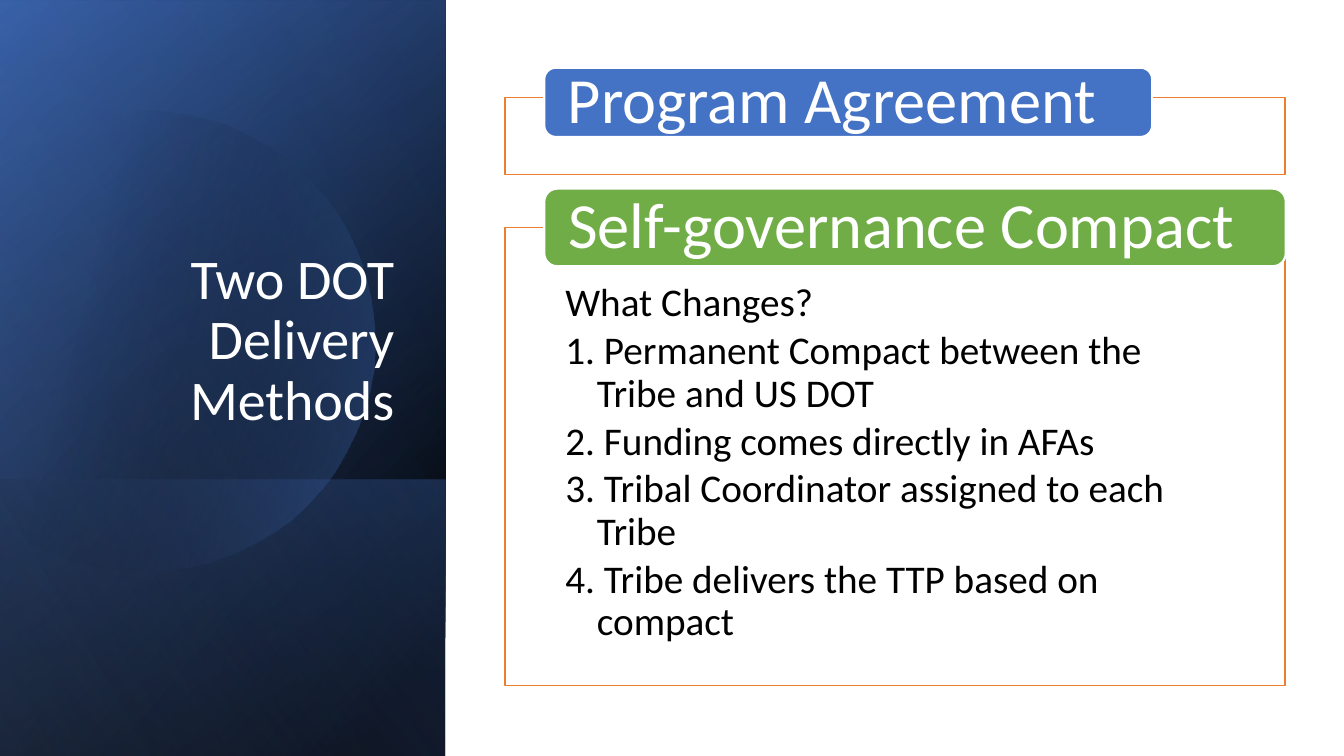
import pptx
import pptx.dml.color
import pptx.enum.shapes
import pptx.enum.text
import pptx.oxml
import pptx.oxml.ns
import pptx.util

Pt = pptx.util.Pt
SHAPES = pptx.enum.shapes.MSO_SHAPE
ALIGN = pptx.enum.text.PP_ALIGN
ANCHOR = pptx.enum.text.MSO_ANCHOR
COLOURS = {
    "black": "000000", "white": "FFFFFF", "blue": "4472C4", "navy": "2F5597",
    "pale": "8FAADC", "orange": "ED7D31", "green": "70AD47",
}
FONT = "Calibri"

# Centre x, centre y, length, thickness, angle, stops (position, colour, opacity)
PANEL_LAYERS = [
    (159.1, 270, 540, 318.2, 50, [(8, "black", 100), (100, "navy", 100)]),
    (159.1, 270.5, 540, 318.2, 30, [(0, "black", 0), (99, "blue", 46)]),
    (159.1, 441.4, 197.3, 318.2, 130, [(2, "blue", 29), (100, "black", 30)]),
]
PANEL_GLOW = (159.1, 270, 540, 318.2, 120, [(0, "black", 0), (99, "pale", 11)])

# Disc outline: start, then curves of two handles and an end, then straight corners
DISC_START = (107.3, 79.2)
DISC_CURVES = [
    ((177.1, 80.6), (241.2, 127.4), (261.4, 198)),
    ((286.6, 285.8), (236.2, 376.6), (149, 401.8)),
    ((94.3, 417.6), (38.2, 403.9), (-2.2, 370.1)),
]
DISC_CORNERS = [(-10.8, 362.2), (-10.8, 126), (0, 115.9)]
DISC_CLOSING = [
    ((16.6, 102.2), (36, 92.2), (57.6, 85.7)),
    ((74.2, 81.4), (90.7, 79.2), DISC_START),
]

CHANGES = [
    "What Changes?",
    "1. Permanent Compact between the Tribe and US DOT",
    "2. Funding comes directly in AFAs",
    "3. Tribal Coordinator assigned to each Tribe",
    "4. Tribe delivers the TTP based on compact",
]


def rgb(name):
    return pptx.dml.color.RGBColor.from_string(COLOURS[name])


def set_gradient(shape, angle, stops):
    shape.shadow.inherit = False
    shape.line.fill.background()
    shape.fill.background()
    stop_xml = "".join(
        f'<a:gs pos="{position * 1000}"><a:srgbClr val="{COLOURS[colour]}">'
        f'<a:alpha val="{opacity * 1000}"/></a:srgbClr></a:gs>'
        for position, colour, opacity in stops)
    gradient = pptx.oxml.parse_xml(
        f'<a:gradFill {pptx.oxml.ns.nsdecls("a")} rotWithShape="1">'
        f'<a:gsLst>{stop_xml}</a:gsLst>'
        f'<a:lin ang="{angle * 60000}" scaled="0"/></a:gradFill>')
    properties = shape._element.spPr
    properties.replace(properties.find(pptx.oxml.ns.qn("a:noFill")), gradient)


def add_panel_layer(page, centre_x, centre_y, length, thickness, angle, stops):
    layer = page.shapes.add_shape(
        SHAPES.RECTANGLE, Pt(centre_x - length / 2), Pt(centre_y - thickness / 2),
        Pt(length), Pt(thickness))
    layer.rotation = 90
    layer._element.spPr.xfrm.set("flipH", "1")
    set_gradient(layer, angle, stops)


def curve_points(start, curves, steps=16):
    points = []
    for first, second, end in curves:
        for step in range(1, steps + 1):
            t = step / steps
            points.append(tuple(
                (1 - t) ** 3 * a + 3 * (1 - t) ** 2 * t * b
                + 3 * (1 - t) * t ** 2 * c + t ** 3 * d
                for a, b, c, d in zip(start, first, second, end)))
        start = end
    return points


def add_disc(page):
    points = (curve_points(DISC_START, DISC_CURVES) + DISC_CORNERS
              + curve_points(DISC_CORNERS[-1], DISC_CLOSING))
    builder = page.shapes.build_freeform(*DISC_START, scale=float(Pt(1)))
    builder.add_line_segments(points, close=True)
    disc = builder.convert_to_shape()
    set_gradient(disc, 14, [(29, "black", 0), (100, "blue", 43)])


def write(shape, lines, size, colour, align=ALIGN.LEFT, anchor=ANCHOR.MIDDLE,
          insets=(7.2, 3.6, 7.2, 3.6), space=0, hanging=0):
    frame = shape.text_frame
    frame.word_wrap = True
    frame.vertical_anchor = anchor
    (frame.margin_left, frame.margin_top,
     frame.margin_right, frame.margin_bottom) = map(Pt, insets)
    for index, line in enumerate(lines):
        para = frame.add_paragraph() if index else frame.paragraphs[0]
        para.alignment = align
        para.line_spacing = 0.9
        para.space_after = Pt(space)
        if hanging:
            indents = para._p.get_or_add_pPr()
            indents.set("marL", str(Pt(hanging)))
            indents.set("indent", str(-Pt(hanging)))
        span = para.add_run()
        span.text = line
        span.font.name = FONT
        span.font.size = Pt(size)
        span.font.color.rgb = rgb(colour)


def add_box(page, kind, left, top, width, height, fill, line, weight):
    box = page.shapes.add_shape(kind, Pt(left), Pt(top), Pt(width), Pt(height))
    box.shadow.inherit = False
    box.fill.solid()
    box.fill.fore_color.rgb = rgb(fill)
    box.line.color.rgb = rgb(line)
    box.line.width = Pt(weight)
    return box


def add_frame(page, top, height):
    return add_box(page, SHAPES.RECTANGLE, 360.7, top, 557.3, height,
                   "white", "orange", 1)


def add_heading(page, text, top, width, height, fill):
    heading = add_box(page, SHAPES.ROUNDED_RECTANGLE, 388.8, top, width, height,
                      fill, "white", 1.5)
    write(heading, [text], 46, "white", insets=(14.4, 0, 14.4, 0))


def main():
    deck = pptx.Presentation()
    deck.slide_width, deck.slide_height = Pt(960), Pt(540)
    page = deck.slides.add_slide(deck.slide_layouts[6])

    # Blue panel with its disc
    for layer in PANEL_LAYERS:
        add_panel_layer(page, *layer)
    add_disc(page)
    add_panel_layer(page, *PANEL_GLOW)

    # Title
    title = page.shapes.add_textbox(Pt(36.7), Pt(46), Pt(252), Pt(266.4))
    write(title, ["Two DOT Delivery Methods"], 40, "white",
          align=ALIGN.RIGHT, anchor=ANCHOR.BOTTOM)

    # Program agreement
    add_frame(page, 69.8, 54.7)
    add_heading(page, "Program Agreement", 48.4, 434.2, 49.4, "blue")

    # Self-governance compact
    changes = add_frame(page, 162.5, 327.4)
    write(changes, CHANGES, 28, "black", anchor=ANCHOR.TOP,
          insets=(43.2, 39.6, 43.2, 15.8), space=4, hanging=22.5)
    add_heading(page, "Self-governance Compact", 134.8, 529.6, 55.4, "green")

    deck.save("out.pptx")


if __name__ == "__main__":
    main()
